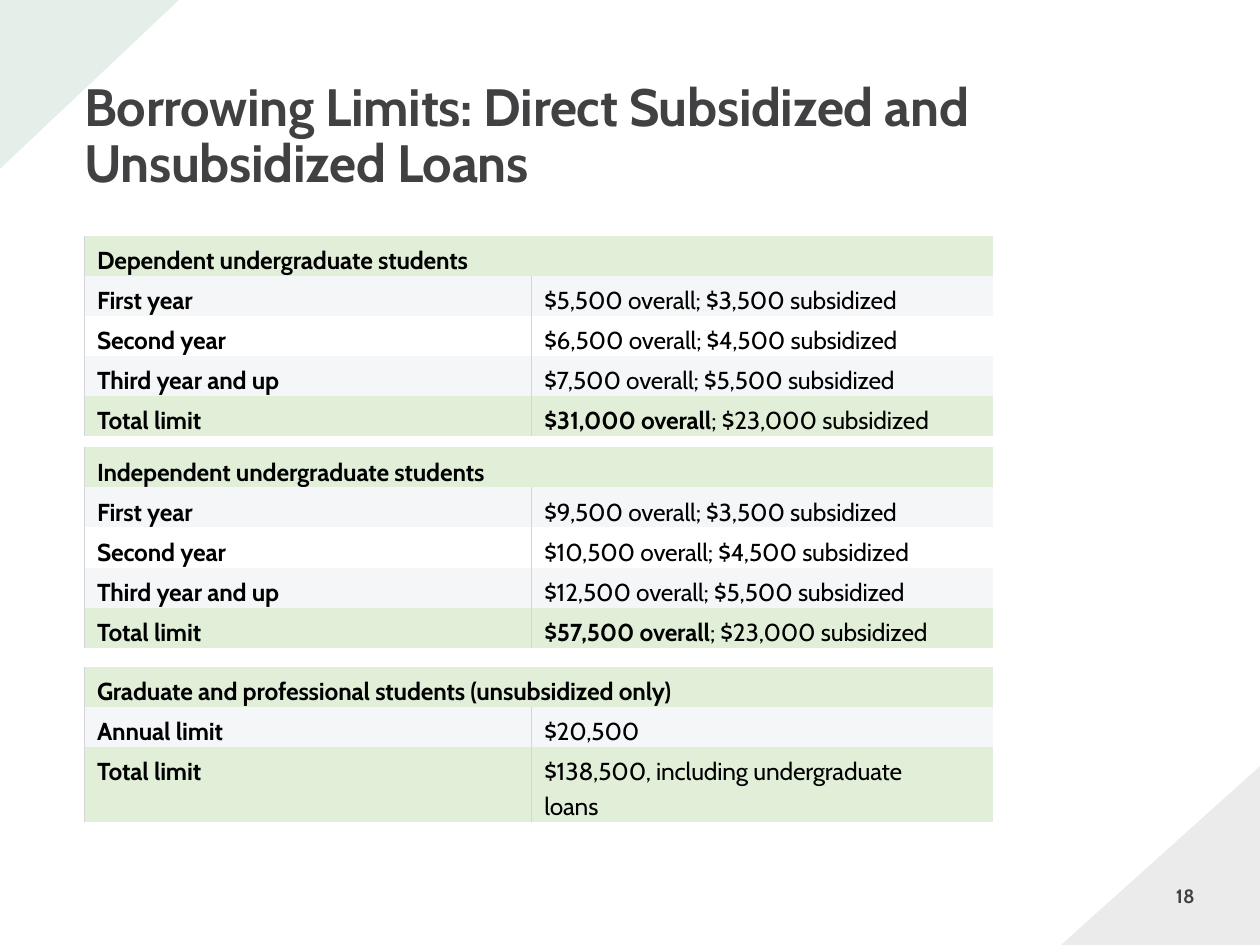
from dataclasses import dataclass

from lxml import etree
from pptx import Presentation
from pptx.dml.color import RGBColor
from pptx.enum.shapes import MSO_SHAPE
from pptx.enum.text import MSO_ANCHOR, PP_ALIGN
from pptx.oxml.ns import qn
from pptx.util import Inches, Pt

TRIANGLE = MSO_SHAPE.RIGHT_TRIANGLE
BOTTOM = MSO_ANCHOR.BOTTOM
LEFT, RIGHT = PP_ALIGN.LEFT, PP_ALIGN.RIGHT

FONT = "Cabin"
GRAY = RGBColor(0x41, 0x40, 0x42)
GREEN = RGBColor(0x05, 0x68, 0x39)
BLACK = RGBColor(0x00, 0x00, 0x00)
MINT = RGBColor(0xE1, 0xEF, 0xD9)
PALE = RGBColor(0xF5, 0xF6, 0xF7)
RULE = RGBColor(0xD2, 0xD6, 0xDC)

NO_STYLE = "{2D5ABB26-0587-4C30-8999-92F81FD0307C}"
TABLE_LEFT = 0.67
COLUMNS = (3.55, 3.66)
ROW = 0.28


@dataclass
class Row:
    label: str
    value: str
    strong: str = ""  # bold lead-in before the value


@dataclass
class Limits:
    top: float
    title: str
    rows: list[Row]
    last: float = ROW  # height of the total row


@dataclass
class Corner:
    left: float
    top: float
    width: float
    height: float
    turn: int
    color: RGBColor
    flip: bool = False


TABLES = [
    Limits(1.87, "Dependent undergraduate students", [
        Row("First year", "$5,500 overall; $3,500 subsidized"),
        Row("Second year", "$6,500 overall; $4,500 subsidized"),
        Row("Third year and up", "$7,500 overall; $5,500 subsidized"),
        Row("Total limit", "; $23,000 subsidized", "$31,000 overall"),
    ]),
    Limits(3.55, "Independent undergraduate students", [
        Row("First year", "$9,500 overall; $3,500 subsidized"),
        Row("Second year", "$10,500 overall; $4,500 subsidized"),
        Row("Third year and up", "$12,500 overall; $5,500 subsidized"),
        Row("Total limit", "; $23,000 subsidized", "$57,500 overall"),
    ]),
    Limits(5.29, "Graduate and professional students (unsubsidized only)", [
        Row("Annual limit", "$20,500"),
        Row("Total limit", "$138,500, including undergraduate loans"),
    ], last=0.47),
]

CORNERS = [
    Corner(8.42, 6.08, 1.58, 1.42, 180, GRAY, flip=True),
    Corner(0.04, -0.04, 1.34, 1.42, 90, GREEN),
]


def style(run, size: float, color: RGBColor, bold: bool, track: int = 0) -> None:
    """Format a run; track is letter spacing in hundredths of a point."""
    font = run.font
    font.name, font.size, font.bold = FONT, Pt(size), bold
    font.color.rgb = color
    if track:
        run._r.get_or_add_rPr().set("spc", str(track))


def draw_corner(slide, corner: Corner) -> None:
    shape = slide.shapes.add_shape(
        TRIANGLE, Inches(corner.left), Inches(corner.top),
        Inches(corner.width), Inches(corner.height))
    shape.rotation = corner.turn
    if corner.flip:
        shape._element.spPr.find(qn("a:xfrm")).set("flipV", "1")
    shape.shadow.inherit = False
    shape.line.fill.background()
    shape.fill.solid()
    shape.fill.fore_color.rgb = corner.color
    tint = shape._element.spPr.find(qn("a:solidFill"))[0]
    etree.SubElement(tint, qn("a:alpha")).set("val", "10000")


def draw_text(slide, text: str, left: float, top: float, width: float,
              height: float, size: float, align, track: int = 0):
    """Add a bold gray text box and return its frame."""
    box = slide.shapes.add_textbox(
        Inches(left), Inches(top), Inches(width), Inches(height))
    frame = box.text_frame
    frame.word_wrap = True
    frame.text = text
    para = frame.paragraphs[0]
    para.alignment = align
    style(para.runs[0], size, GRAY, True, track)
    return frame


def add_rule(cell, side: str) -> None:
    line = etree.SubElement(cell._tc.get_or_add_tcPr(), qn(f"a:{side}"))
    line.set("w", str(Pt(0.75)))
    fill = etree.SubElement(line, qn("a:solidFill"))
    etree.SubElement(fill, qn("a:srgbClr")).set("val", str(RULE))


def fill_cell(cell, parts: list[tuple[str, bool]], color: RGBColor | None,
              sides: tuple[str, ...] = ("lnL",)) -> None:
    """Write (text, bold) parts into a cell; no color means no fill."""
    cell.margin_left = cell.margin_right = cell.margin_bottom = 0
    cell.margin_top = Inches(0.04)
    for side in sides:
        add_rule(cell, side)
    if color is None:
        cell.fill.background()
    else:
        cell.fill.solid()
        cell.fill.fore_color.rgb = color
    para = cell.text_frame.paragraphs[0]
    para.line_spacing = Pt(20)
    props = para._p.get_or_add_pPr()
    props.set("marL", str(Inches(0.1)))
    props.set("marR", str(Inches(0.3)))
    props.set("indent", "0")
    for text, bold in parts:
        run = para.add_run()
        run.text = text
        style(run, 14, BLACK, bold, -10)


def draw_table(slide, limits: Limits) -> None:
    count = len(limits.rows)
    heights = [ROW] * count + [limits.last]
    table = slide.shapes.add_table(
        count + 1, 2, Inches(TABLE_LEFT), Inches(limits.top),
        Inches(sum(COLUMNS)), Inches(sum(heights))).table
    table.first_row = table.horz_banding = False
    table._tbl.tblPr.find(qn("a:tableStyleId")).text = NO_STYLE
    for column, width in zip(table.columns, COLUMNS):
        column.width = Inches(width)
    for line, height in zip(table.rows, heights):
        line.height = Inches(height)

    head = table.cell(0, 0)
    head.merge(table.cell(0, 1))
    fill_cell(head, [(limits.title, True)], MINT)
    for i, row in enumerate(limits.rows, 1):
        color = MINT if i == count else PALE if i % 2 else None
        value = [(row.value, False)]
        if row.strong:
            value.insert(0, (row.strong, True))
        fill_cell(table.cell(i, 0), [(row.label, True)], color, ("lnL", "lnR"))
        fill_cell(table.cell(i, 1), value, color)


def main() -> None:
    deck = Presentation()
    deck.slide_width, deck.slide_height = Inches(10), Inches(7.5)
    slide = deck.slides.add_slide(deck.slide_layouts[6])
    for corner in CORNERS:
        draw_corner(slide, corner)

    title = draw_text(
        slide, "Borrowing Limits: Direct Subsidized and Unsubsidized Loans",
        0.67, 0.62, 8.6, 0.92, 30, LEFT, -20)
    title.vertical_anchor = BOTTOM
    title.margin_left = title.margin_right = title.margin_bottom = 0
    title.margin_top = Inches(0.01)
    title.paragraphs[0].line_spacing = 0.9

    draw_text(slide, "18", 7.33, 6.97, 2.25, 0.4, 11, RIGHT)
    for limits in TABLES:
        draw_table(slide, limits)
    deck.save("out.pptx")


if __name__ == "__main__":
    main()
